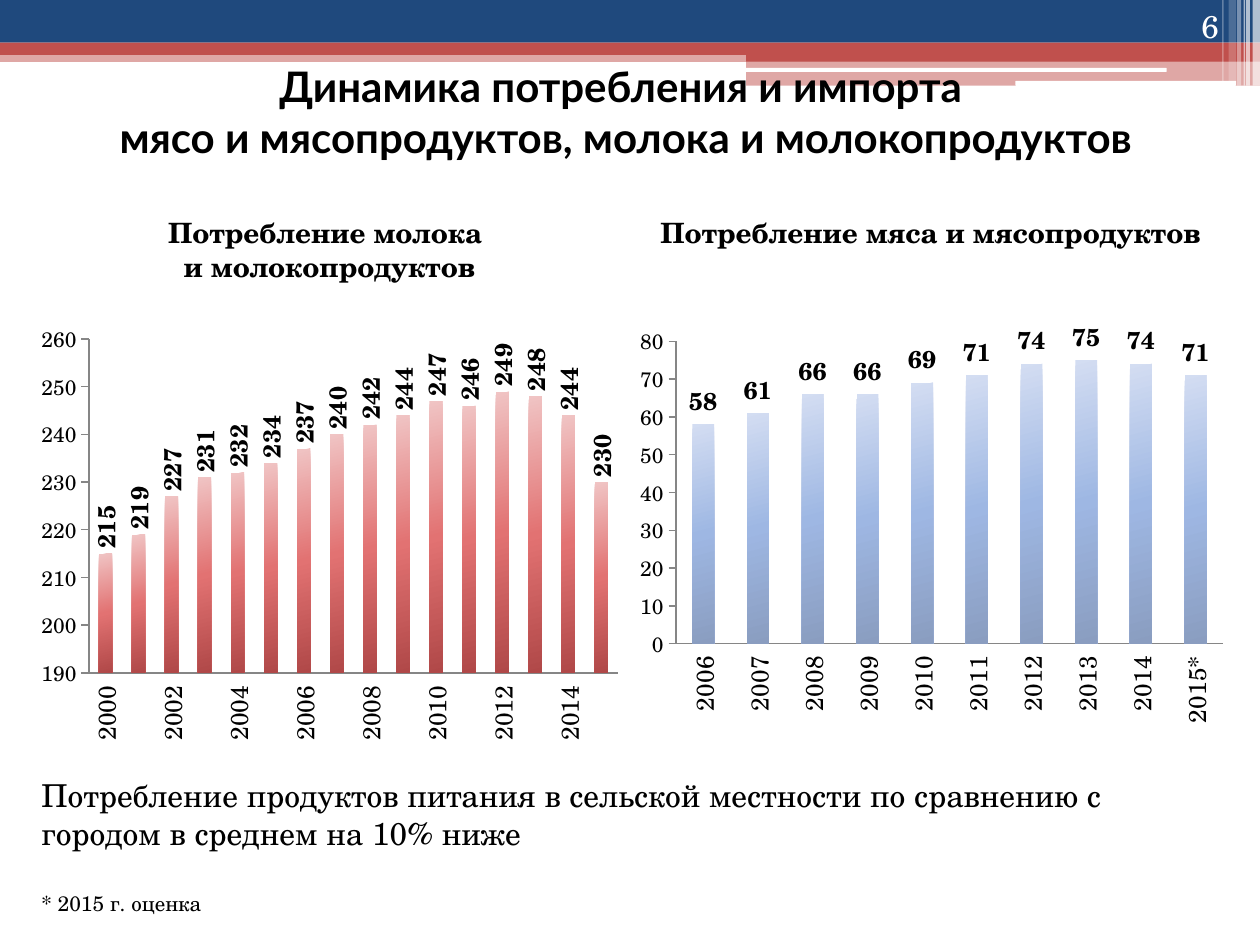
from lxml import etree
from pptx import Presentation
from pptx import util as u
from pptx.chart.data import CategoryChartData
from pptx.dml.color import RGBColor
from pptx.enum import chart as charts, shapes, text
from pptx.oxml import parse_xml
from pptx.oxml.ns import nsdecls, qn

SERIF = "TeX Gyre Schola"
SANS = "Lato"
BLACK, WHITE, NAVY, RED, GREY = "000000", "FFFFFF", "1F497D", "C0504D", "868686"
RECT = shapes.MSO_SHAPE.RECTANGLE
ROUND = shapes.MSO_SHAPE.ROUNDED_RECTANGLE
VERTICAL = "-5400000"

BANDS = [
    (RECT, 0, 1.02, 25.4, 0.23, RED, 50),
    (RECT, 0, 0, 25.4, 0.86, NAVY, 100),
    (RECT, 0, 0.86, 25.4, 0.25, RED, 100),
    (RECT, 15.04, 0.99, 10.36, 0.25, RED, 100),
    (RECT, 15.04, 1.22, 10.36, 0.51, RED, 50),
    (ROUND, 15.01, 1.37, 8.51, 0.08, WHITE, 100),
    (ROUND, 20.47, 1.63, 4.45, 0.1, WHITE, 100),
]
STRIPES = [
    (25.25, 0.15, 1.73, 65),
    (25.12, 0.08, 1.73, 65),
    (25.07, 0.03, 1.73, 60),
    (24.94, 0.08, 1.73, 40),
    (24.77, 0.15, 1.63, 20),
    (24.64, 0.03, 1.63, 30),
]
MILK = [215, 219, 227, 231, 232, 234, 237, 240, 242, 244, 247, 246, 249, 248, 244, 230]
MEAT = [58, 61, 66, 66, 69, 71, 74, 75, 74, 71]


def rgb(value):
    """Turn a hex string into a colour."""
    return RGBColor.from_string(value)


def place(shape, left, top, width, height):
    """Set the position and size of a shape in centimetres."""
    shape.left, shape.top = u.Cm(left), u.Cm(top)
    shape.width, shape.height = u.Cm(width), u.Cm(height)


def style_font(font, size, name=SERIF, color=BLACK, bold=False):
    """Set the face, size, weight and colour of a font."""
    font.name, font.size, font.bold = name, u.Pt(size), bold
    font.color.rgb = rgb(color)


def add_band(slide, kind, left, top, width, height, color, opacity=100):
    """Add a flat decorative bar with an optional opacity in percent."""
    shape = slide.shapes.add_shape(kind, *map(u.Cm, (left, top, width, height)))
    shape.shadow.inherit = False
    shape.fill.solid()
    shape.fill.fore_color.rgb = rgb(color)
    shape.line.fill.background()
    if opacity < 100:
        fill = shape.element.spPr.find(qn("a:solidFill"))
        etree.SubElement(fill[0], qn("a:alpha"), val=str(opacity * 1000))


def write_lines(paragraph, lines, size, align, **font):
    """Fill a paragraph with lines parted by line breaks."""
    paragraph.alignment = align
    for index, line in enumerate(lines):
        if index:
            paragraph.add_line_break()
        run = paragraph.add_run()
        run.text = line
        style_font(run.font, size, **font)


def add_text(slide, box, lines, size, align, anchor=text.MSO_ANCHOR.TOP, **font):
    """Add a wrapping text box with one paragraph."""
    frame = slide.shapes.add_textbox(*map(u.Cm, box)).text_frame
    frame.word_wrap = True
    frame.vertical_anchor = anchor
    write_lines(frame.paragraphs[0], lines, size, align, **font)


def fill_title(slide, lines):
    """Fill the title placeholder and bring it in front of the bands."""
    title = slide.shapes.title
    place(title, 0.41, 1.35, 24.41, 1.78)
    frame = title.text_frame
    frame.auto_size = text.MSO_AUTO_SIZE.NONE
    frame.vertical_anchor = text.MSO_ANCHOR.MIDDLE
    write_lines(frame.paragraphs[0], lines, 24, text.PP_ALIGN.CENTER, name=SANS, bold=True)
    title.element.getparent().append(title.element)


def fill_body(slide, entries):
    """Fill the body placeholder with plain (text, size, space before) entries."""
    body = slide.placeholders[1]
    place(body, 0.58, 15.52, 24, 3.07)
    frame = body.text_frame
    frame.auto_size = text.MSO_AUTO_SIZE.NONE
    for index, (line, size, space) in enumerate(entries):
        paragraph = frame.add_paragraph() if index else frame.paragraphs[0]
        write_lines(paragraph, [line], size, text.PP_ALIGN.LEFT)
        paragraph.space_before = u.Pt(space)
        properties = paragraph._p.get_or_add_pPr()
        properties.set("marL", "0")
        properties.set("indent", "0")
        etree.SubElement(properties, qn("a:buNone"))


def rotate_text(properties):
    """Turn chart text to read upwards."""
    body = properties.find(qn("a:bodyPr"))
    body.set("rot", VERTICAL)
    body.set("vert", "horz")


def fill_gradient(series, colors):
    """Shade the columns through evenly spaced colours."""
    step = 100000 // (len(colors) - 1)
    stops = "".join(
        f'<a:gs pos="{index * step}"><a:srgbClr val="{color}"/></a:gs>'
        for index, color in enumerate(colors)
    )
    series.format.fill.background()
    properties = series._element.spPr
    properties.replace(properties.find(qn("a:noFill")), parse_xml(
        f'<a:gradFill {nsdecls("a")} rotWithShape="1"><a:gsLst>{stops}</a:gsLst>'
        '<a:lin ang="4500000" scaled="0"/></a:gradFill>'
    ))


def set_plot_area(chart, box):
    """Fix the inner plot area as fractions of the chart."""
    area = chart._chartSpace.chart.plotArea
    for layout in area.findall(qn("c:layout")):
        area.remove(layout)
    sizes = "".join(f'<c:{key} val="{value}"/>' for key, value in zip("xywh", box))
    area.insert(0, parse_xml(
        f'<c:layout {nsdecls("c")}><c:manualLayout><c:layoutTarget val="inner"/>'
        f'<c:xMode val="edge"/><c:yMode val="edge"/>{sizes}</c:manualLayout></c:layout>'
    ))


def add_columns(slide, box, first_year, values, scale, colors, plot_box, skip=1, upright=False):
    """Add a column chart of yearly values ending with an estimate."""
    data = CategoryChartData()
    years = [str(first_year + index) for index in range(len(values))]
    data.categories = years[:-1] + [years[-1] + "*"]
    data.add_series("Series 1", values)
    chart = slide.shapes.add_chart(
        charts.XL_CHART_TYPE.COLUMN_CLUSTERED, *map(u.Cm, box), data).chart
    chart.has_legend = chart.has_title = False
    style_font(chart.font, 12)
    set_plot_area(chart, plot_box)

    value_axis, category_axis = chart.value_axis, chart.category_axis
    value_axis.minimum_scale, value_axis.maximum_scale = scale
    value_axis.major_unit = 10
    value_axis.has_major_gridlines = False
    value_axis.major_tick_mark = charts.XL_TICK_MARK.OUTSIDE
    category_axis.major_tick_mark = charts.XL_TICK_MARK.NONE
    category_axis.tick_label_position = charts.XL_TICK_LABEL_POSITION.LOW
    for axis, size in ((value_axis, 12), (category_axis, 14)):
        style_font(axis.tick_labels.font, size)
        axis.format.line.color.rgb = rgb(GREY)
    rotate_text(category_axis._element.txPr)
    skip_mark = parse_xml(f'<c:tickLblSkip {nsdecls("c")} val="{skip}"/>')
    category_axis._element.find(qn("c:noMultiLvlLbl")).addprevious(skip_mark)

    plot = chart.plots[0]
    plot.gap_width = 150
    plot.vary_by_categories = False
    fill_gradient(plot.series[0], colors)
    labels = plot.series[0].data_labels
    labels.show_value = True
    labels.position = charts.XL_LABEL_POSITION.OUTSIDE_END
    style_font(labels.font, 14, bold=True)
    if upright:
        rotate_text(labels._element.find(qn("c:txPr")))


def main():
    """Build the slide and save it."""
    presentation = Presentation()
    presentation.slide_width, presentation.slide_height = u.Cm(25.4), u.Cm(19.05)
    slide = presentation.slides.add_slide(presentation.slide_layouts[1])
    for band in BANDS:
        add_band(slide, *band)
    for left, width, height, opacity in STRIPES:
        add_band(slide, RECT, left, 0, width, height, WHITE, opacity)
    fill_title(slide, ["Динамика потребления и импорта ",
                       "мясо и мясопродуктов, молока и молокопродуктов"])
    add_text(slide, (22.71, 0, 2.11, 1.02), ["6"], 18, text.PP_ALIGN.RIGHT,
             text.MSO_ANCHOR.BOTTOM, color=WHITE)
    add_columns(slide, (0.58, 6.4, 12.12, 8.74), 2000, MILK, (190, 260),
                ("F0C4C4", "E27272", "B04848"), (0.1, 0.05, 0.88, 0.77), 2, True)
    add_text(slide, (0.58, 4.22, 12.12, 1.63), ["Потребление молока ", "и молокопродуктов"],
             16, text.PP_ALIGN.CENTER, bold=True)
    add_columns(slide, (12.9, 6.4, 12.12, 8.53), 2006, MEAT, (0, 80),
                ("D3DDF2", "9EB7E3", "8A9DC0"), (0.06, 0.05, 0.91, 0.72))
    add_text(slide, (12.7, 4.22, 12.12, 0.94), ["Потребление мяса и мясопродуктов"],
             16, text.PP_ALIGN.CENTER, bold=True)
    fill_body(slide, [
        ("Потребление продуктов питания в сельской местности по сравнению с "
         "городом в среднем на 10% ниже", 18, 0),
        ("* 2015 г. оценка", 12, 22),
    ])
    presentation.save("out.pptx")


if __name__ == "__main__":
    main()
